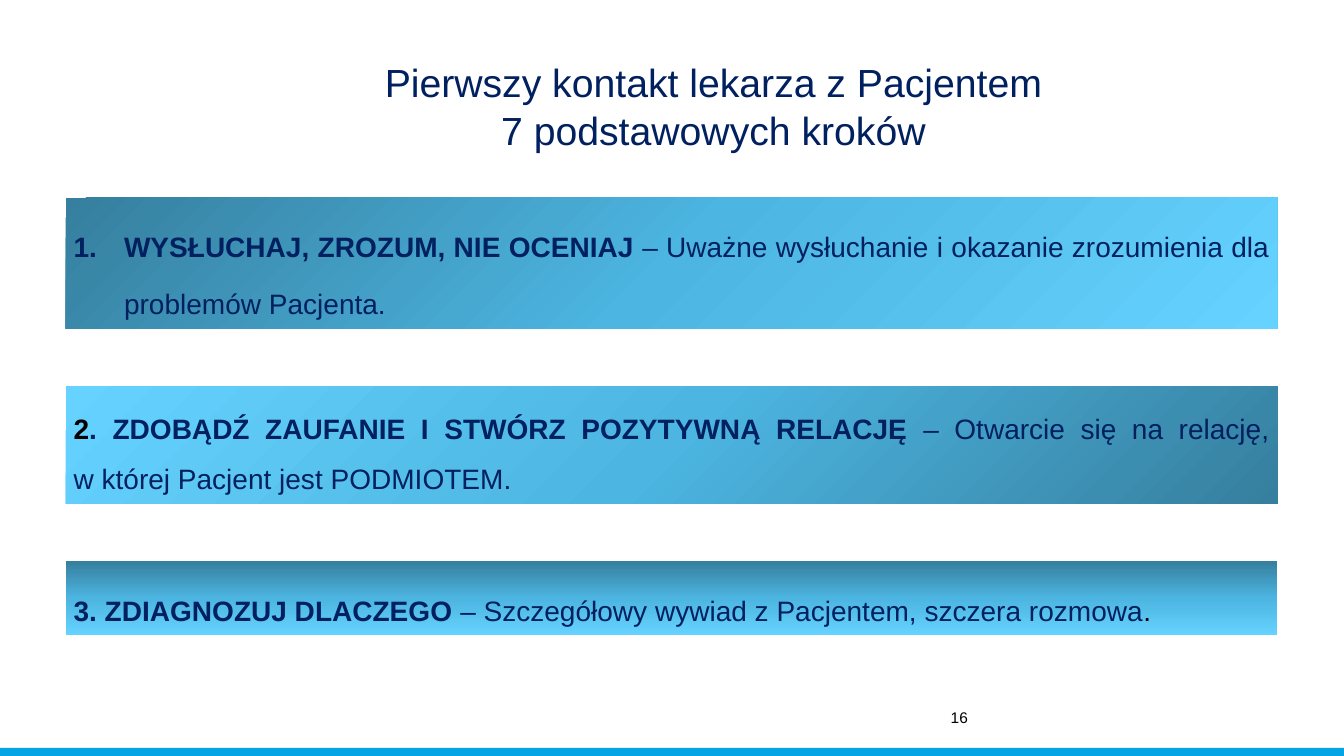
from pptx import Presentation
from pptx.dml.color import RGBColor
from pptx.enum.shapes import MSO_SHAPE
from pptx.enum.text import MSO_ANCHOR, MSO_AUTO_SIZE, PP_ALIGN
from pptx.oxml import parse_xml
from pptx.oxml.ns import nsdecls, qn
from pptx.util import Inches, Pt

RECT = MSO_SHAPE.RECTANGLE
MIDDLE = MSO_ANCHOR.MIDDLE
GROW, FIXED = MSO_AUTO_SIZE.SHAPE_TO_FIT_TEXT, MSO_AUTO_SIZE.NONE
CENTER, JUSTIFY = PP_ALIGN.CENTER, PP_ALIGN.JUSTIFY

COLORS = {"navy": "002060", "black": "000000", "bar": "05A4E5",
          "dark": "367F9E", "mid": "4CB5E1", "light": "66D2FF"}
STOPS = "".join(
    f'<a:gs pos="{pos}"><a:srgbClr val="{COLORS[name]}"/></a:gs>'
    for pos, name in ((0, "dark"), (50000, "mid"), (100000, "light")))
DIAGONAL = '<a:lin ang="2700000" scaled="0"/>'
DOWN = '<a:lin ang="5400000" scaled="0"/>'
CORNER = ('<a:path path="circle"><a:fillToRect l="100000" t="100000"/></a:path>'
          '<a:tileRect r="-100000" b="-100000"/>')


def rgb(name):
    return RGBColor.from_string(COLORS[name])


def set_frame(frame, fit):
    """Set wrapping, fitting and equal margins of a text frame."""
    frame.word_wrap = True
    frame.auto_size = fit
    frame.margin_left = frame.margin_right = Inches(0.08)
    frame.margin_top = frame.margin_bottom = Inches(0.08)


deck = Presentation()
deck.slide_width, deck.slide_height = Inches(13.33), Inches(7.5)
slide = deck.slides.add_slide(deck.slide_layouts[5])

# Footer bar and page number
bar = slide.shapes.add_shape(RECT, Inches(-0.01), Inches(7.42), Inches(13.36), Inches(0.09))
bar.shadow.inherit = False
bar.fill.solid()
bar.fill.fore_color.rgb = rgb("bar")
bar.line.fill.background()

number = slide.shapes.add_textbox(Inches(9.35), Inches(6.95), Inches(3.06), Inches(0.34))
set_frame(number.text_frame, GROW)
para = number.text_frame.paragraphs[0]
para.text = "16"
para.font.size, para.font.name = Pt(11), "Arial"
para.font.color.rgb = rgb("black")

# Title
title = slide.shapes.title
title.left, title.top = Inches(1.73), Inches(0.4)
title.width, title.height = Inches(10.69), Inches(1.3)
set_frame(title.text_frame, FIXED)
title.text_frame.vertical_anchor = MIDDLE
para = title.text_frame.paragraphs[0]
para.text = "Pierwszy kontakt lekarza z Pacjentem\v7 podstawowych kroków"
para.alignment = CENTER
para.font.size, para.font.name = Pt(28), "Arial"
para.font.color.rgb = rgb("navy")

# Steps: top, height, gradient, line spacing, numbered, runs of (text, bold, colour)
STEPS = [
    (1.96, 1.3, DIAGONAL, 1.7, True, [
        ("WYSŁUCHAJ, ZROZUM, NIE OCENIAJ ", True, "navy"),
        ("– Uważne wysłuchanie i okazanie zrozumienia dla problemów Pacjenta.",
         False, "navy")]),
    (3.83, 1.17, CORNER, 1.5, False, [
        ("2", True, "black"),
        (". ZDOBĄDŹ ZAUFANIE I STWÓRZ POZYTYWNĄ RELACJĘ ", True, "navy"),
        ("– Otwarcie się na relację,\vw której Pacjent jest PODMIOTEM.", False, "navy")]),
    (5.57, 0.73, DOWN, 1.7, False, [
        ("3. ZDIAGNOZUJ DLACZEGO ", True, "navy"),
        ("– Szczegółowy wywiad z Pacjentem, szczera rozmowa", False, "navy"),
        (".", False, "black")]),
]

for top, height, shade, spacing, numbered, runs in STEPS:
    box = slide.shapes.add_shape(RECT, Inches(0.65), Inches(top), Inches(12.02), Inches(height))
    box.shadow.inherit = False
    box.line.fill.background()
    box.element.spPr.find(qn("a:prstGeom")).addnext(parse_xml(
        f'<a:gradFill {nsdecls("a")} rotWithShape="1">'
        f'<a:gsLst>{STOPS}</a:gsLst>{shade}</a:gradFill>'))

    frame = box.text_frame
    set_frame(frame, GROW)
    frame.vertical_anchor = MIDDLE
    para = frame.paragraphs[0]
    para.alignment, para.line_spacing = JUSTIFY, spacing
    if numbered:
        props = para._p.get_or_add_pPr()
        props.set("marL", str(Inches(0.5)))
        props.set("indent", str(-Inches(0.5)))
        props.append(parse_xml(f'<a:buFont {nsdecls("a")} typeface="+mj-lt"/>'))
        props.append(parse_xml(f'<a:buAutoNum {nsdecls("a")} type="arabicPeriod"/>'))
    para.font.size, para.font.name = Pt(20), "Arial"
    for text, bold, color in runs:
        for i, line in enumerate(text.split("\v")):
            if i:
                para.add_line_break()
            run = para.add_run()
            run.text = line
            run.font.bold = bold
            run.font.color.rgb = rgb(color)

deck.save("out.pptx")
